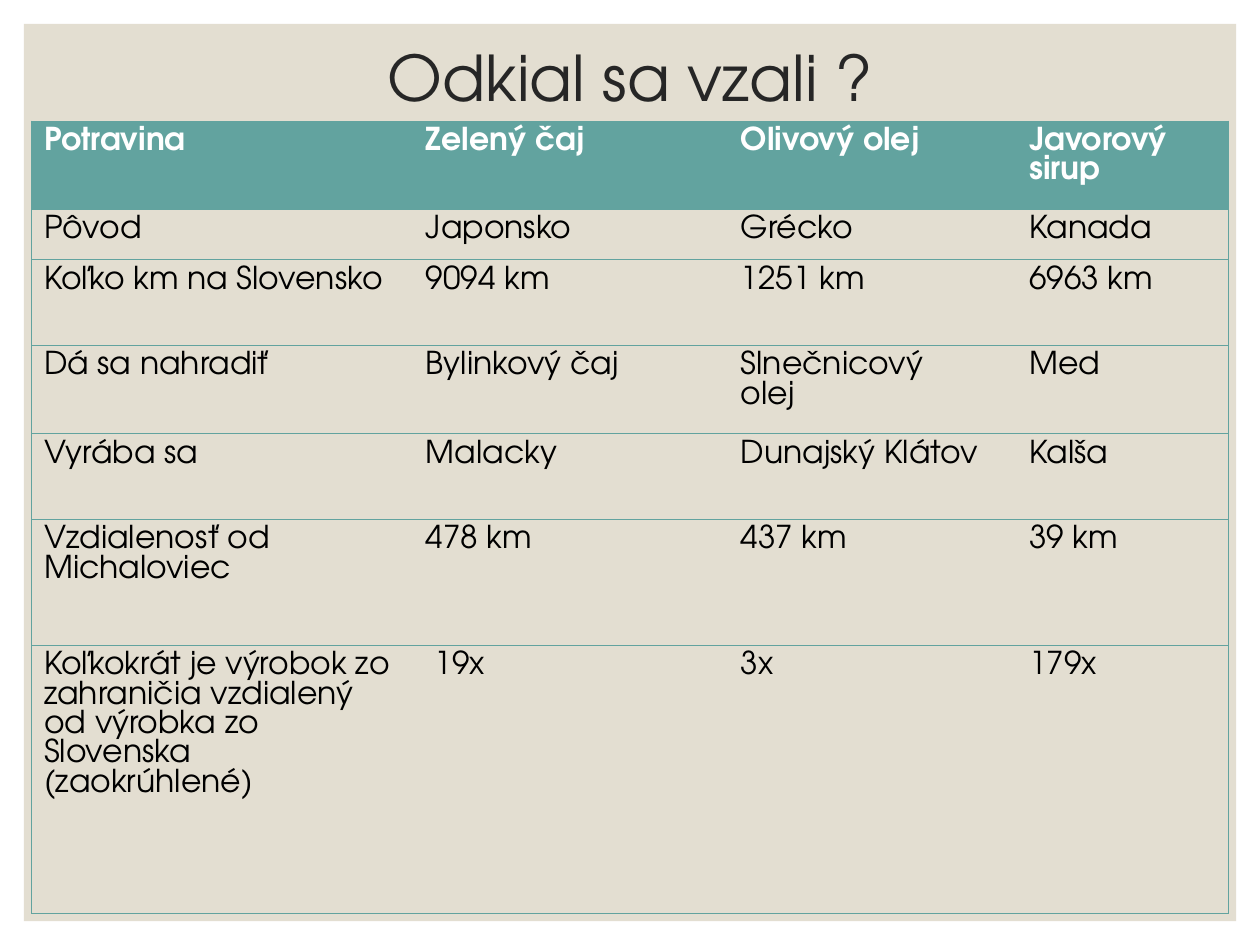
from lxml.etree import SubElement
from pptx import Presentation
from pptx.dml.color import RGBColor
from pptx.enum.shapes import MSO_SHAPE
from pptx.enum.text import MSO_ANCHOR, PP_ALIGN
from pptx.oxml import parse_xml
from pptx.oxml.ns import nsdecls, qn
from pptx.util import Inches, Pt

FONT = "TeX Gyre Adventor"
TEAL, SAND = "62A39F", "E3DED1"

COLS = [3.03, 2.5, 2.29, 1.68]
ROWS = [0.7, 0.4, 0.68, 0.7, 0.68, 1, 2.13]
# A line break in a cell starts a new paragraph
DATA = [
    ["Potravina", "Zelený čaj", "Olivový olej", "Javorový sirup"],
    ["Pôvod", "Japonsko", "Grécko", "Kanada"],
    ["Koľko km na Slovensko", "9094 km", "1251 km", "6963 km"],
    ["Dá sa nahradiť", "Bylinkový čaj", "Slnečnicový\nolej", "Med"],
    ["Vyrába sa", "Malacky", "Dunajský Klátov", "Kalša"],
    ["Vzdialenosť od Michaloviec", "478 km", "437 km", "39 km"],
    ["Koľkokrát je výrobok zo zahraničia vzdialený od výrobka zo Slovenska\n"
     "(zaokrúhlené)", " 19x", "3x", "179x"],
]


def rgb(color):
    return RGBColor.from_string(color)


def style(p, size, color, bold=False):
    p.font.name = FONT
    p.font.size = Pt(size)
    p.font.bold = bold
    p.font.color.rgb = rgb(color)


def add_panel(s):
    sp = s.shapes.add_shape(MSO_SHAPE.RECTANGLE, Inches(0.19), Inches(0.19),
                            Inches(9.62), Inches(7.12))
    sp.shadow.inherit = False
    sp.fill.solid()
    sp.fill.fore_color.rgb = rgb(SAND)
    sp.line.fill.background()
    # Send behind the title
    s.shapes._spTree.insert(2, sp._element)


def set_title(s, text):
    sp = s.shapes.title
    sp.left, sp.top = Inches(0.8), Inches(0.33)
    sp.width, sp.height = Inches(8.4), Inches(0.63)
    tf = sp.text_frame
    tf.text = text
    tf.vertical_anchor = MSO_ANCHOR.MIDDLE
    p = tf.paragraphs[0]
    p.alignment = PP_ALIGN.CENTER
    p.line_spacing = 0.9
    style(p, 36, "262626")


def set_borders(cell, visible):
    """Draw the sides named in visible and hide the others."""
    tc_pr = cell._tc.get_or_add_tcPr()
    for i, side in enumerate("LRTB"):
        ln = parse_xml(f'<a:ln{side} {nsdecls("a")} w="{Pt(0.5)}"/>')
        if side in visible:
            fill = SubElement(ln, qn("a:solidFill"))
            SubElement(fill, qn("a:srgbClr"), val=TEAL)
        else:
            SubElement(ln, qn("a:noFill"))
        tc_pr.insert(i, ln)


def fill_cell(cell, text, header):
    cell.text = text
    for p in cell.text_frame.paragraphs:
        style(p, 18, "FFFFFF" if header else "000000", header)
    if header:
        cell.fill.solid()
        cell.fill.fore_color.rgb = rgb(TEAL)
    else:
        cell.fill.background()


def add_food_table(s):
    table = s.shapes.add_table(len(ROWS), len(COLS), Inches(0.25), Inches(0.96),
                               Inches(sum(COLS)), Inches(sum(ROWS))).table
    table.horz_banding = False
    for col, width in zip(table.columns, COLS):
        col.width = Inches(width)
    for row, height in zip(table.rows, ROWS):
        row.height = Inches(height)
    last = len(COLS) - 1
    for r, texts in enumerate(DATA):
        for c, text in enumerate(texts):
            cell = table.cell(r, c)
            fill_cell(cell, text, header=r == 0)
            set_borders(cell, "TB" + "L" * (c == 0) + "R" * (c == last))


def main():
    prs = Presentation()
    prs.slide_width, prs.slide_height = Inches(10), Inches(7.5)
    s = prs.slides.add_slide(prs.slide_layouts[5])
    add_panel(s)
    set_title(s, "Odkial sa vzali ?")
    add_food_table(s)
    prs.save("out.pptx")


if __name__ == "__main__":
    main()
